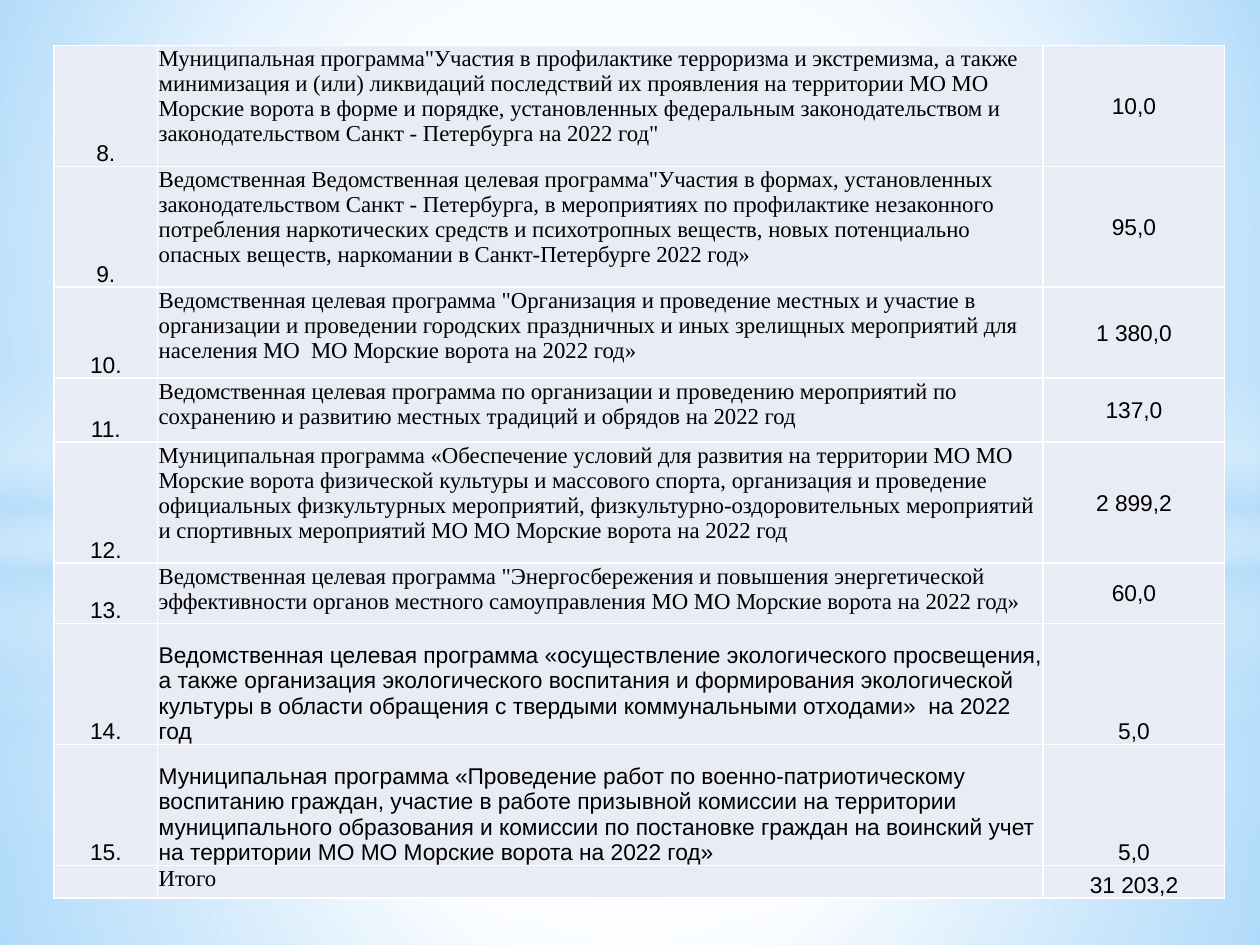
from typing import NamedTuple

from lxml import etree
from pptx import Presentation
from pptx.dml.color import RGBColor
from pptx.enum.shapes import MSO_SHAPE
from pptx.enum.text import MSO_ANCHOR, PP_ALIGN
from pptx.oxml.ns import qn
from pptx.util import Inches, Pt

RECT, OVAL = MSO_SHAPE.RECTANGLE, MSO_SHAPE.OVAL
TOP, MID, LOW = MSO_ANCHOR.TOP, MSO_ANCHOR.MIDDLE, MSO_ANCHOR.BOTTOM
LEFT, CENTER = PP_ALIGN.LEFT, PP_ALIGN.CENTER
SANS, SERIF = "Arial", "Times New Roman"
WHITE, SKY, CELL, BLACK = "FFFFFF", "B4DCFA", "E9EBF5", "000000"
SIZE = 13


class Stop(NamedTuple):
    pos: int
    color: str
    alpha: int = 100


class Glow(NamedTuple):
    kind: int
    top: float
    height: float
    stops: list[Stop]
    focus: tuple[int, ...] | None = (50, 50, 50, 50)


class Item(NamedTuple):
    num: str
    name: str
    sum: str
    height: float
    font: str = SERIF
    name_pos: int = TOP
    sum_pos: int = MID


def radial(mid: int, *alphas: int) -> list[Stop]:
    return [Stop(pos, color, alpha) for pos, color, alpha
            in zip((0, mid, 100), (WHITE, WHITE, SKY), alphas)]


def halo(edge: int) -> list[Stop]:
    return [Stop(0, WHITE), Stop(edge, WHITE, 0)] + (
        [Stop(100, WHITE, 0)])


BAND = [Stop(0, WHITE, 0), Stop(29, WHITE, 30), Stop(45, SKY, 40),
        Stop(55, WHITE, 26), Stop(65, SKY, 60), Stop(100, WHITE, 0)]
BACK = [Stop(0, "9ED5FF"), Stop(60, WHITE), Stop(100, "5BB9FF")]
GLOWS = [
    Glow(RECT, 5.58, 1.92, radial(37, 91, 76, 79)),
    Glow(RECT, 0, 5.58, radial(48, 89, 62, 79)),
    Glow(RECT, 4.12, 2.5, BAND, None),
    Glow(OVAL, 1.75, 5.58, halo(56)),
    Glow(RECT, 4.23, 3.27, radial(37, 92, 77, 80)),
    Glow(RECT, 0, 4.23, radial(48, 90, 63, 80)),
    Glow(RECT, 2.9, 2.5, BAND, None),
    Glow(OVAL, 1.75, 5.58, halo(54)),
]

COLS = (0.82, 7.03, 1.44)
ITEMS = [
    Item("8.", 'Муниципальная программа"Участия в профилактике терроризма и '
         "экстремизма, а также минимизация и (или) ликвидаций последствий их "
         "проявления на территории МО МО Морские ворота в форме и порядке, "
         "установленных федеральным законодательством и законодательством "
         'Санкт - Петербурга на 2022 год"', "10,0", 0.96),
    Item("9.", 'Ведомственная Ведомственная целевая программа"Участия в '
         "формах, установленных законодательством Санкт - Петербурга, в "
         "мероприятиях по профилактике незаконного потребления наркотических "
         "средств и психотропных веществ, новых потенциально опасных веществ, "
         "наркомании в Санкт-Петербурге 2022 год»", "95,0", 0.96),
    Item("10.", 'Ведомственная целевая программа "Организация и проведение '
         "местных и участие в организации и проведении городских праздничных "
         "и иных зрелищных мероприятий для населения МО  МО Морские ворота "
         "на 2022 год»", "1 380,0", 0.72),
    Item("11.", "Ведомственная целевая программа по организации и проведению "
         "мероприятий по сохранению и развитию местных традиций и обрядов "
         "на 2022 год", "137,0", 0.51),
    Item("12.", "Муниципальная программа «Обеспечение условий для развития на "
         "территории МО МО Морские ворота физической культуры и массового "
         "спорта, организация и проведение официальных физкультурных "
         "мероприятий, физкультурно-оздоровительных мероприятий и спортивных "
         "мероприятий МО МО Морские ворота на 2022 год", "2 899,2", 0.96),
    Item("13.", 'Ведомственная целевая программа "Энергосбережения и '
         "повышения энергетической эффективности органов местного "
         "самоуправления МО МО Морские ворота на 2022 год»", "60,0", 0.48),
    Item("14.", "Ведомственная целевая программа «осуществление "
         "экологического просвещения, а также организация экологического "
         "воспитания и формирования экологической культуры в области "
         "обращения с твердыми коммунальными отходами»  на 2022 год",
         "5,0", 0.96, SANS, LOW, LOW),
    Item("15.", "Муниципальная программа «Проведение работ по "
         "военно-патриотическому воспитанию граждан, участие в работе "
         "призывной комиссии на территории муниципального образования и "
         "комиссии по постановке граждан на воинский учет на территории "
         "МО МО Морские ворота на 2022 год»", "5,0", 0.96, SANS, LOW, LOW),
    Item("", "Итого", "31 203,2", 0.26, sum_pos=LOW),
]


def rgb(color: str) -> RGBColor:
    return RGBColor.from_string(color)


def add(parent, tag: str, **attrs):
    """Append a DrawingML child with the given attributes."""
    return etree.SubElement(parent, qn(f"a:{tag}"),
                            {key: str(val) for key, val in attrs.items()})


def shade(owner, fill, stops: list[Stop], focus) -> None:
    """Fill with a gradient: round about focus, or top to bottom without."""
    fill.gradient()
    grad = owner.element.xpath(".//a:gradFill")[0]
    for child in list(grad):
        grad.remove(child)
    chain = add(grad, "gsLst")
    for stop in stops:
        node = add(chain, "gs", pos=stop.pos * 1000)
        tint = add(node, "srgbClr", val=stop.color)
        if stop.alpha < 100:
            add(tint, "alpha", val=stop.alpha * 1000)
    if focus:
        way = add(grad, "path", path="circle")
        add(way, "fillToRect",
            **{side: part * 1000 for side, part in zip("ltrb", focus)})
    else:
        add(grad, "lin", ang=90 * 60000, scaled=0)


def draw_glow(slide, glow: Glow) -> None:
    shape = slide.shapes.add_shape(glow.kind, 0, Inches(glow.top),
                                   Inches(10), Inches(glow.height))
    shape.shadow.inherit = False
    shape.line.fill.background()
    shade(shape, shape.fill, glow.stops, glow.focus)


def edge(cell) -> None:
    """Give the cell thin white borders, which must precede its fill."""
    props = cell._tc.get_or_add_tcPr()
    for side in ("lnL", "lnR", "lnT", "lnB"):
        line = add(props, side, w=Pt(1))
        add(add(line, "solidFill"), "srgbClr", val=WHITE)


def set_cell(cell, text: str, font: str, anchor: int, align: int) -> None:
    edge(cell)
    cell.fill.solid()
    cell.fill.fore_color.rgb = rgb(CELL)
    cell.margin_left = cell.margin_right = cell.margin_top = Inches(0.01)
    cell.margin_bottom = 0
    cell.vertical_anchor = anchor
    para = cell.text_frame.paragraphs[0]
    para.text = text
    para.alignment = align
    for run in para.runs:
        run.font.name = font
        run.font.size = Pt(SIZE)
        run.font.color.rgb = rgb(BLACK)
    if not text:
        add(para._p, "endParaRPr", sz=SIZE * 100)


def draw_table(slide, items: list[Item]) -> None:
    frame = slide.shapes.add_table(
        len(items), len(COLS), Inches(0.43), Inches(0.36),
        Inches(sum(COLS)), Inches(sum(item.height for item in items)))
    table = frame.table
    for col, width in zip(table.columns, COLS):
        col.width = Inches(width)
    for row, item in zip(table.rows, items):
        row.height = Inches(item.height)
        num, name, total = row.cells
        set_cell(num, item.num, SANS, LOW, CENTER)
        set_cell(name, item.name, item.font, item.name_pos, LEFT)
        set_cell(total, item.sum, SANS, item.sum_pos, CENTER)


def main() -> None:
    deck = Presentation()
    deck.slide_width, deck.slide_height = Inches(10), Inches(7.5)
    slide = deck.slides.add_slide(deck.slide_layouts[6])
    shade(slide, slide.background.fill, BACK, (20, 10, 20, 60))
    for glow in GLOWS:
        draw_glow(slide, glow)
    draw_table(slide, ITEMS)
    deck.save("out.pptx")


if __name__ == "__main__":
    main()
